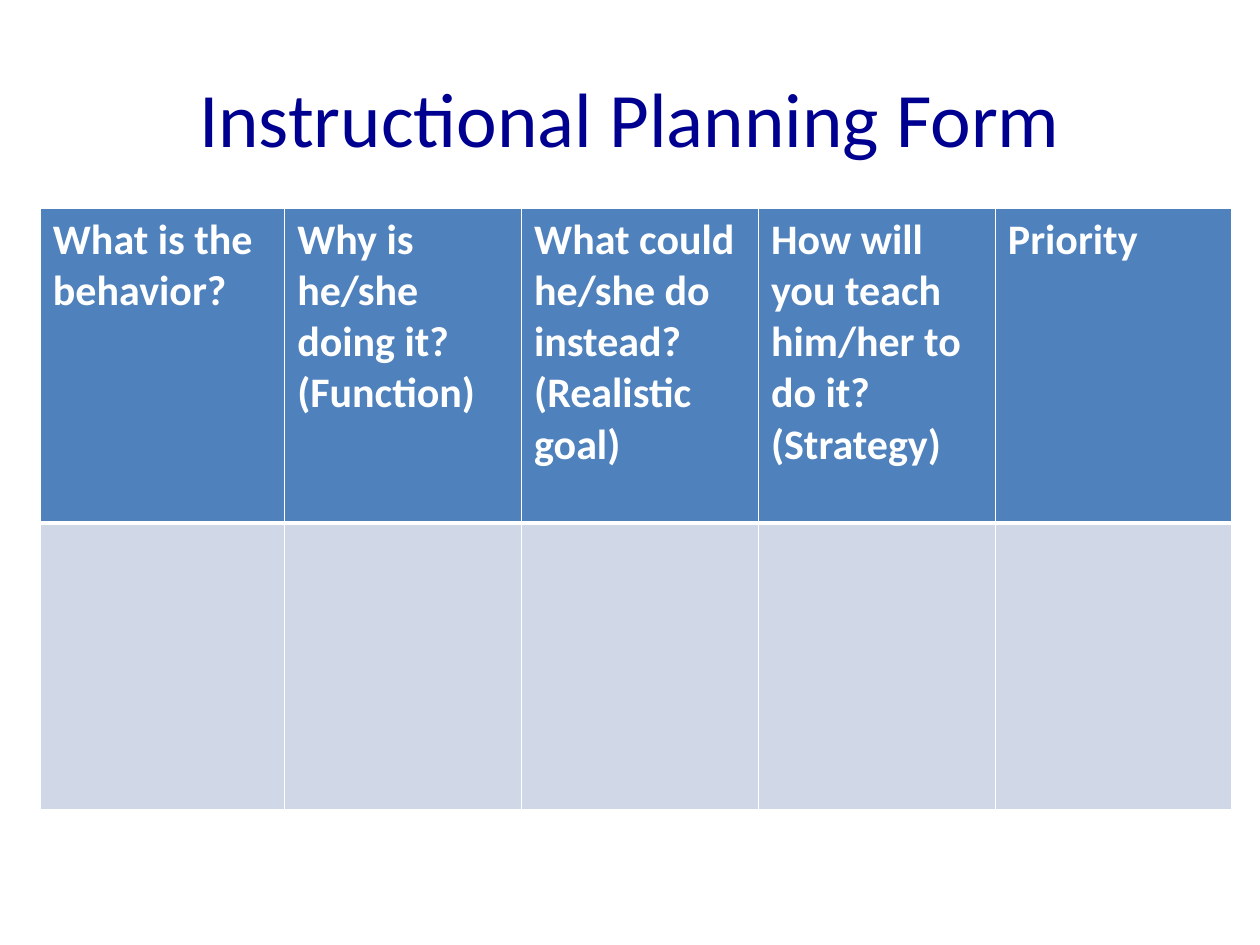
from lxml import etree
from pptx import Presentation
from pptx.dml.color import RGBColor
from pptx.enum import text
from pptx.oxml import ns
from pptx.util import Inches, Pt

TITLE_FORMAT = {"name": "Calibri", "size": Pt(44), "bold": False}
HEADER_FORMAT = {"name": "Calibri", "size": Pt(24), "bold": True}
HEADINGS = [
    ["What is the behavior?"],
    ["Why is he/she doing it?", "(Function)"],
    ["What could he/she do instead?", "(Realistic goal)"],
    ["How will you teach him/her to do it?", "(Strategy)"],
    ["Priority"],
]
COLUMN_WIDTHS = [1.94] + [1.88] * 4
ROW_HEIGHTS = [2.5, 2.28]


def color(value):
    return RGBColor.from_string(value)


def format_font(font, values, hex_color):
    for name, value in values.items():
        setattr(font, name, value)
    font.color.rgb = color(hex_color)


def set_borders(cell, widths, hex_color):
    properties = cell._tc.get_or_add_tcPr()
    for position, (side, width) in enumerate(widths.items()):
        line = etree.Element(ns.qn(f"a:ln{side}"), w=str(Pt(width)))
        fill = etree.SubElement(line, ns.qn("a:solidFill"))
        etree.SubElement(fill, ns.qn("a:srgbClr"), val=hex_color)
        properties.insert(position, line)


def add_title(slide, left, top, width, height):
    title = slide.shapes.title
    title.left, title.top, title.width, title.height = left, top, width, height
    title.text_frame.text = "Instructional Planning Form"
    title.text_frame.vertical_anchor = text.MSO_ANCHOR.MIDDLE
    paragraph = title.text_frame.paragraphs[0]
    paragraph.alignment = text.PP_ALIGN.CENTER
    format_font(paragraph.font, TITLE_FORMAT, "000090")


def add_planning_table(slide, left, top, width, height):
    table = slide.shapes.add_table(
        len(ROW_HEIGHTS), len(HEADINGS), left, top, width, height
    ).table
    for column, column_width in zip(table.columns, COLUMN_WIDTHS):
        column.width = Inches(column_width)
    for row, row_height in zip(table.rows, ROW_HEIGHTS):
        row.height = Inches(row_height)

    for index, lines in enumerate(HEADINGS):
        header, answer = table.cell(0, index), table.cell(1, index)
        header.text = "\n".join(lines)
        for paragraph in header.text_frame.paragraphs:
            format_font(paragraph.font, HEADER_FORMAT, "FFFFFF")
        for cell, fill, top_line, bottom_line in (
            (header, "4F81BD", 1, 3),
            (answer, "D0D8E8", 3, 1),
        ):
            cell.fill.solid()
            cell.fill.fore_color.rgb = color(fill)
            set_borders(
                cell, {"L": 1, "R": 1, "T": top_line, "B": bottom_line}, "FFFFFF"
            )


def main():
    presentation = Presentation()
    presentation.slide_width = Inches(10)
    presentation.slide_height = Inches(7.5)
    slide = presentation.slides.add_slide(presentation.slide_layouts[5])
    add_title(slide, Inches(0.5), Inches(0.3), Inches(9), Inches(1.25))
    add_planning_table(
        slide, Inches(0.32), Inches(1.65), Inches(9.46), Inches(4.78)
    )
    presentation.save("out.pptx")


if __name__ == "__main__":
    main()
